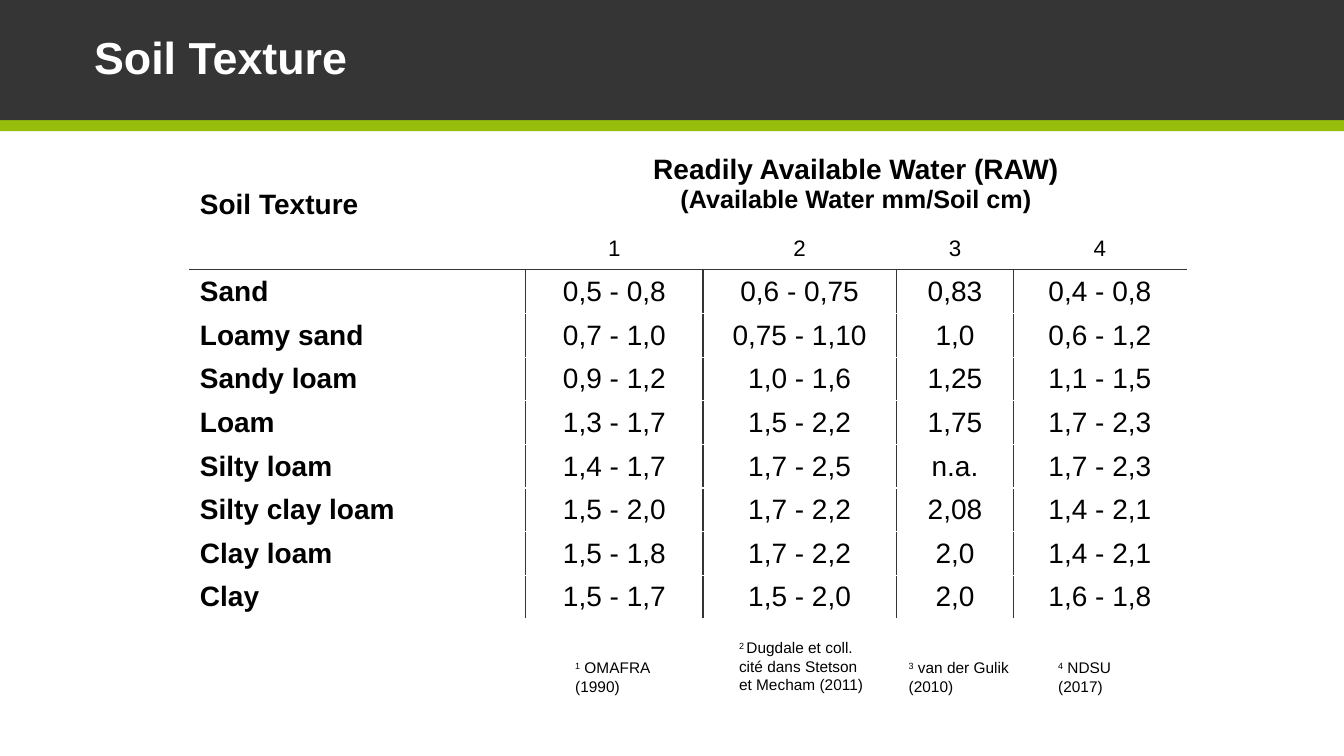
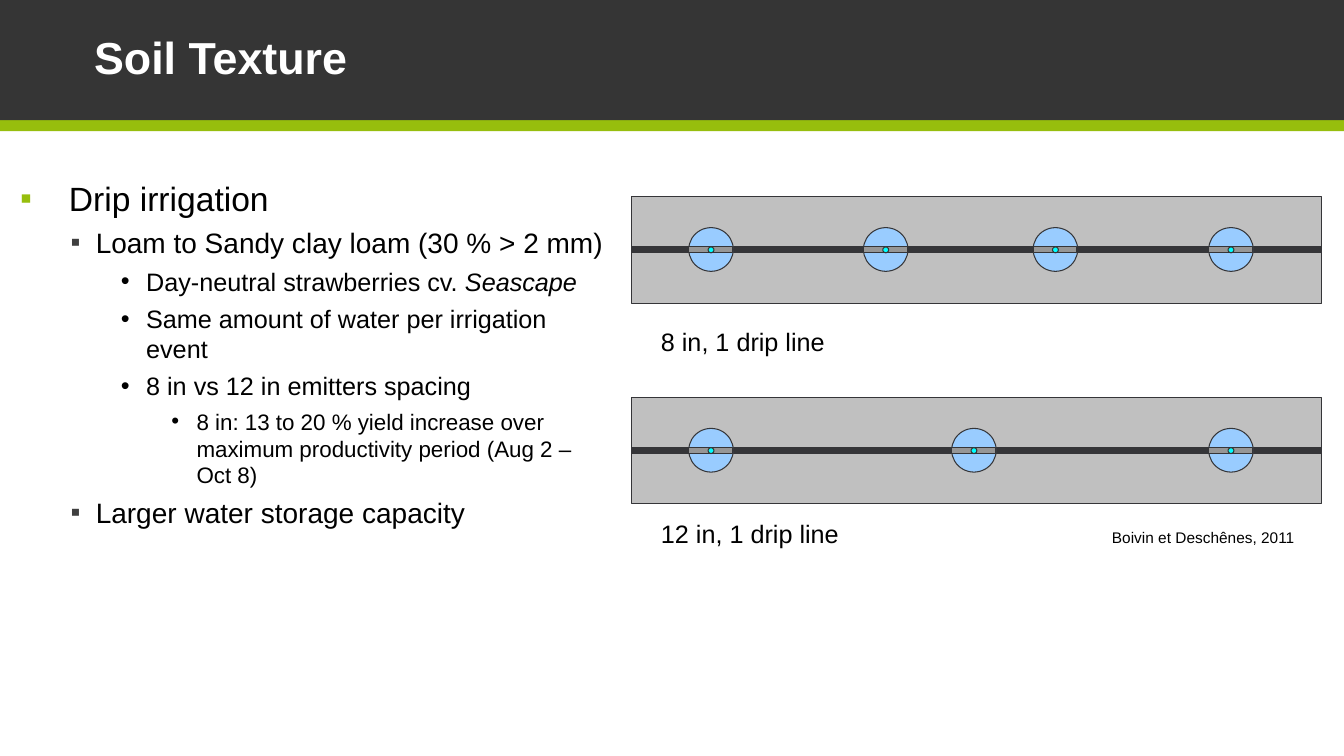
"""Two slides on soil texture: a table of available water and a drip irrigation diagram."""
from lxml import etree
from pptx import Presentation
from pptx.dml.color import RGBColor
from pptx.enum.shapes import MSO_SHAPE
from pptx.enum.text import MSO_ANCHOR, MSO_AUTO_SIZE, PP_ALIGN
from pptx.oxml.ns import qn
from pptx.util import Emu, Pt

BLACK, WHITE, GREEN, BAND, LINE = "000000", "FFFFFF", "97BE0D", "353535", "353538"
FONT = "Arial"


def paint(fill, color):
    fill.solid()
    fill.fore_color.rgb = RGBColor.from_string(color)


def write(p, text, size=18, color=BLACK, bold=False, italic=False, raised=False):
    r = p.add_run()
    r.text = text
    r.font.name, r.font.size = FONT, Pt(size)
    r.font.bold, r.font.italic = bold, italic
    paint(r.font.fill, color)
    if raised:
        r.font._element.set("baseline", "30000")


prs = Presentation()
prs.slide_width, prs.slide_height = Emu(12192000), Emu(6858000)
COL, ROW = prs.slide_width // 1600, prs.slide_height // 900

table_slide = prs.slides.add_slide(prs.slide_layouts[5])
drip_slide = prs.slides.add_slide(prs.slide_layouts[1])

for s in prs.slides:
    title = s.shapes.title
    title.left, title.top = 100 * COL, 0
    title.width, title.height = 1332 * COL, 143 * ROW
    tf = title.text_frame
    tf.auto_size, tf.vertical_anchor = MSO_AUTO_SIZE.NONE, MSO_ANCHOR.MIDDLE
    p = tf.paragraphs[0]
    p.alignment, p.line_spacing = PP_ALIGN.LEFT, 0.9
    write(p, "Soil Texture", size=32, color=WHITE, bold=True)

master_tree = prs.slide_master.element.cSld.spTree
for y, h, color in [(0, 143, BAND), (143, 13, GREEN)]:
    sp = table_slide.shapes.add_shape(
        MSO_SHAPE.RECTANGLE, 0, y * ROW, prs.slide_width, h * ROW)
    sp.shadow.inherit = False
    paint(sp.fill, color)
    sp.line.fill.background()
    master_tree.insert(2, sp.element)

widths = [400, 211, 230, 140, 205]
heights = [106, 48] + [52] * 8
rows = [
    ("Soil Texture", "Readily Available Water (RAW)", "", "", ""),
    ("", "1", "2", "3", "4"),
    ("Sand", "0,5 - 0,8", "0,6 - 0,75", "0,83", "0,4 - 0,8"),
    ("Loamy sand", "0,7 - 1,0", "0,75 - 1,10", "1,0", "0,6 - 1,2"),
    ("Sandy loam", "0,9 - 1,2", "1,0 - 1,6", "1,25", "1,1 - 1,5"),
    ("Loam", "1,3 - 1,7", "1,5 - 2,2", "1,75", "1,7 - 2,3"),
    ("Silty loam", "1,4 - 1,7", "1,7 - 2,5", "n.a.", "1,7 - 2,3"),
    ("Silty clay loam", "1,5 - 2,0", "1,7 - 2,2", "2,08", "1,4 - 2,1"),
    ("Clay loam", "1,5 - 1,8", "1,7 - 2,2", "2,0", "1,4 - 2,1"),
    ("Clay", "1,5 - 1,7", "1,5 - 2,0", "2,0", "1,6 - 1,8"),
]
table = table_slide.shapes.add_table(
    len(rows), len(widths), 226 * COL, 166 * ROW,
    sum(widths) * COL, sum(heights) * ROW).table
table.first_row = table.horz_banding = False
for column, w in zip(table.columns, widths):
    column.width = w * COL
for row, h in zip(table.rows, heights):
    row.height = h * ROW
table.cell(0, 0).merge(table.cell(1, 0))
table.cell(0, 1).merge(table.cell(0, 4))

for i, row in enumerate(rows):
    for j, text in enumerate(row):
        cell = table.cell(i, j)
        cell.vertical_anchor = MSO_ANCHOR.MIDDLE
        dark = {
            "L": i > 1 and j > 0,
            "R": i > 1 and j < len(row) - 1,
            "T": i == 2,
            "B": i == 1 or (i, j) == (0, 0),
        }
        for side, is_dark in dark.items():
            ln = etree.SubElement(cell._tc.get_or_add_tcPr(), qn(f"a:ln{side}"), w="12700")
            solid = etree.SubElement(ln, qn("a:solidFill"))
            etree.SubElement(solid, qn("a:srgbClr"), val=LINE if is_dark else WHITE)
        paint(cell.fill, WHITE)
        if text:
            p = cell.text_frame.paragraphs[0]
            p.alignment = PP_ALIGN.CENTER if j else PP_ALIGN.LEFT
            write(p, text, size=16 if i == 1 else 20, bold=i == 0 or j == 0)
p = table.cell(0, 1).text_frame.add_paragraph()
p.alignment = PP_ALIGN.CENTER
write(p, "(Available Water mm/Soil cm)", bold=True)

levels = [
    (24, "▪", GREEN, 58, 58),
    (20, "▪", "3F3F3F", 90, 30),
    (18, "•", BLACK, 150, 30),
    (16, "•", BLACK, 210, 30),
]
points = [
    (0, "Drip irrigation", ""),
    (1, "Loam to Sandy clay loam (30 % > 2 mm)", ""),
    (2, "Day-neutral strawberries cv. ", "Seascape"),
    (2, "Same amount of water per irrigation event", ""),
    (2, "8 in vs 12 in emitters spacing", ""),
    (3, "8 in: 13 to 20 % yield increase over maximum productivity period (Aug 2 – Oct 8)", ""),
    (1, "Larger water storage capacity", ""),
]
body = drip_slide.placeholders[1]
body.left, body.top, body.width, body.height = 12 * COL, 206 * ROW, 728 * COL, 606 * ROW
tf = body.text_frame
tf.auto_size = MSO_AUTO_SIZE.NONE
for i, (level, text, cultivar) in enumerate(points):
    size, bullet, color, margin, hang = levels[level]
    p = tf.add_paragraph() if i else tf.paragraphs[0]
    p.level = level
    pPr = p._p.get_or_add_pPr()
    pPr.set("marL", str(margin * COL))
    pPr.set("indent", str(-hang * COL))
    etree.SubElement(etree.SubElement(pPr, qn("a:buClr")), qn("a:srgbClr"), val=color)
    etree.SubElement(pPr, qn("a:buFont"), typeface=FONT)
    etree.SubElement(pPr, qn("a:buChar"), char=bullet)
    p.space_before = Pt(5 if i else 0)
    write(p, text, size=size)
    if cultivar:
        write(p, cultivar, size=size, italic=True)

bed_parts = [
    (MSO_SHAPE.RECTANGLE, 821, 127, "C0C0C0"),
    (MSO_SHAPE.RECTANGLE, 821, 7, LINE),
]
emitter_parts = [
    (MSO_SHAPE.OVAL, 53, 52, "99CCFF"),
    (MSO_SHAPE.RECTANGLE, 52, 7, "969696"),
    (MSO_SHAPE.OVAL, 7, 7, "00FFFF"),
]
for middle, emitters in [(297, (846, 1054, 1256, 1465)), (536, (846, 1159, 1465))]:
    bed = drip_slide.shapes.add_group_shape()
    parts = [(1162, part) for part in bed_parts]
    parts += [(x, part) for x in emitters for part in emitter_parts]
    for center, (shape, w, h, color) in parts:
        sp = bed.shapes.add_shape(
            shape, (center - w // 2) * COL, (middle - h // 2) * ROW, w * COL, h * ROW)
        sp.shadow.inherit = False
        paint(sp.fill, color)
        paint(sp.line.fill, LINE)
        sp.line.width = Pt(0.75)

text_boxes = [
    (table_slide, 673, 778, 167, 56, 11, "1", " OMAFRA (1990)"),
    (table_slide, 868, 754, 175, 80, 11, "2 ",
     "Dugdale et coll. cité dans Stetson et Mecham (2011)"),
    (table_slide, 1070, 778, 150, 56, 11, "3", " van der Gulik (2010)"),
    (table_slide, 1248, 778, 127, 56, 11, "4", " NDSU (2017)"),
    (drip_slide, 775, 383, 268, 48, 18, "", "8 in, 1 drip line"),
    (drip_slide, 775, 611, 268, 48, 18, "", "12 in, 1 drip line"),
    (drip_slide, 1312, 623, 262, 35, 11, "", "Boivin et Deschênes, 2011"),
]
for s, x, y, w, h, size, mark, text in text_boxes:
    tf = s.shapes.add_textbox(x * COL, y * ROW, w * COL, h * ROW).text_frame
    tf.word_wrap, tf.auto_size = True, MSO_AUTO_SIZE.SHAPE_TO_FIT_TEXT
    p = tf.paragraphs[0]
    if mark:
        write(p, mark, size=size, raised=True)
    write(p, text, size=size)

prs.save("out.pptx")
